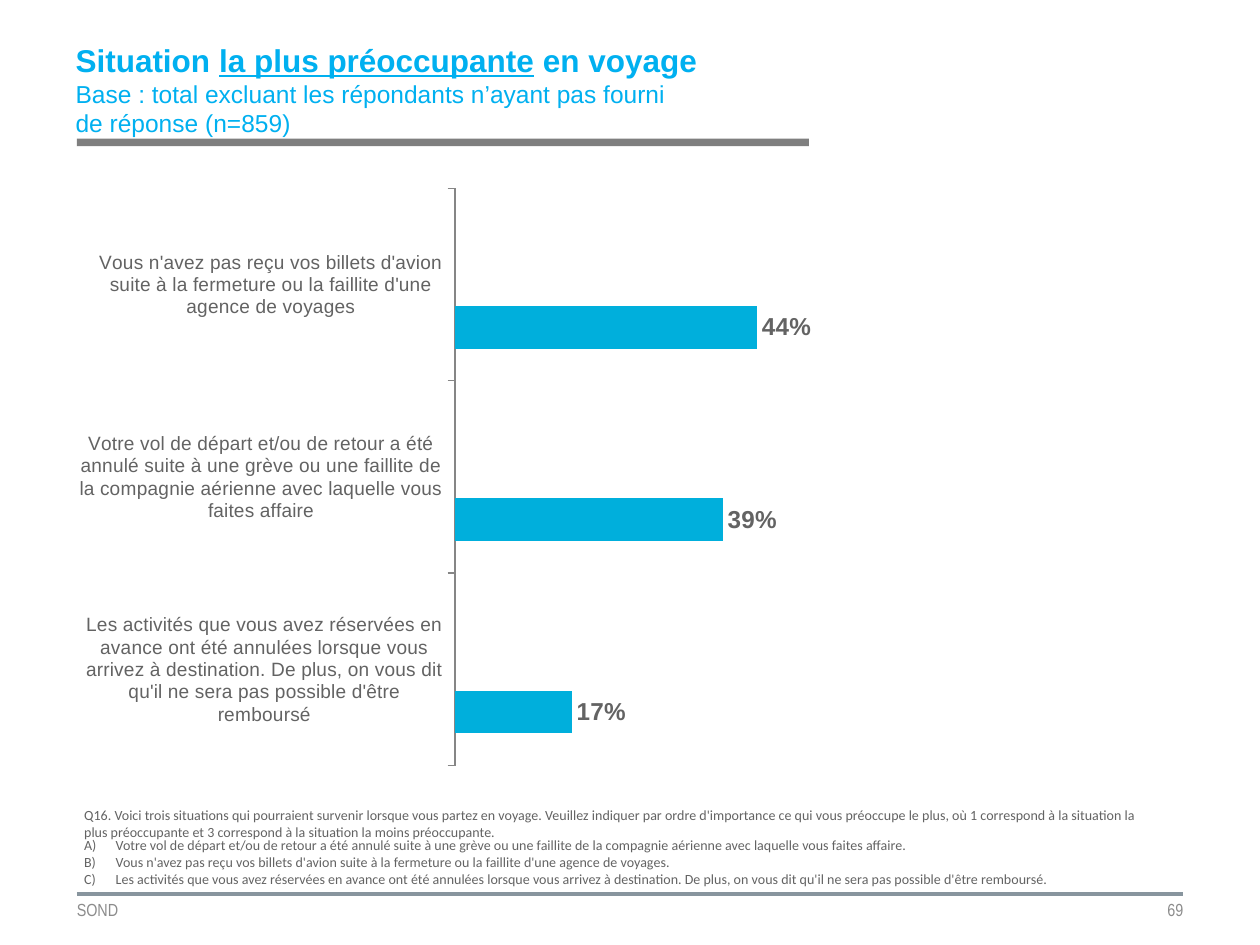
from dataclasses import dataclass

import lxml.etree
import pptx
import pptx.chart.data
import pptx.dml.color
import pptx.enum.chart
import pptx.enum.shapes
import pptx.enum.text
import pptx.oxml
import pptx.oxml.ns
import pptx.util

Pt = pptx.util.Pt
Anchor = pptx.enum.text.MSO_ANCHOR
Align = pptx.enum.text.PP_ALIGN
qn = pptx.oxml.ns.qn


def rgb(code):
    return pptx.dml.color.RGBColor.from_string(code)


@dataclass(frozen=True)
class Theme:
    title: str = "00B0F0"
    bar: str = "00AFDC"
    spare_bars: tuple = ("C0504D", "9BBB59")
    text: str = "636363"
    footer: str = "8C8C8C"
    rule: str = "88959E"
    band: str = "7F7F7F"
    axis: str = "868686"
    title_size: int = 18
    base_size: int = 14
    value_size: int = 14
    category_size: int = 11
    footer_size: int = 10
    note_size: int = 8


THEME = Theme()

TICKETS = ("Vous n'avez pas reçu vos billets d'avion suite à la fermeture "
           "ou la faillite d'une agence de voyages")
FLIGHT = ("Votre vol de départ et/ou de retour a été annulé suite à une grève ou une "
          "faillite de la compagnie aérienne avec laquelle vous faites affaire")
ACTIVITIES = ("Les activités que vous avez réservées en avance ont été annulées lorsque vous "
              "arrivez à destination. De plus, on vous dit qu'il ne sera pas possible "
              "d'être remboursé")
QUESTION = ("Q16. Voici trois situations qui pourraient survenir lorsque vous partez en voyage. "
            "Veuillez indiquer par ordre d'importance ce qui vous préoccupe le plus, où 1 "
            "correspond à la situation la plus préoccupante et 3 correspond à la situation "
            "la moins préoccupante.")


def set_font(font, name, size, color, bold=False):
    font.name = name
    font.size = Pt(size)
    font.bold = bold
    font.color.rgb = rgb(color)


def add_text(page, box, lines, anchor=Anchor.TOP, inset=None):
    """Add a wrapping text box, one paragraph per line, and return its paragraphs."""
    frame = page.shapes.add_textbox(*map(Pt, box)).text_frame
    frame.word_wrap = True
    frame.vertical_anchor = anchor
    if inset is not None:
        frame.margin_left = frame.margin_right = Pt(inset)
        frame.margin_top = frame.margin_bottom = Pt(inset)
    frame.text = "\n".join(lines)
    return frame.paragraphs


def add_heading(page, box):
    left, top, width, height = box
    paras = add_text(page, (left, top, width, 43.2), [
        "",
        "Base : total excluant les répondants n’ayant pas fourni",
        "de réponse (n=859)",
    ], Anchor.MIDDLE, 0)
    for words, underlined in (("Situation ", False), ("la plus préoccupante", True),
                              (" en voyage", False)):
        span = paras[0].add_run()
        span.text = words
        span.font.underline = underlined
    set_font(paras[0].font, "Arial", THEME.title_size, THEME.title, True)
    for para in paras[1:]:
        set_font(para.font, "Arial", THEME.base_size, THEME.title)

    # Grey band under the heading
    band = page.shapes.add_shape(pptx.enum.shapes.MSO_SHAPE.RECTANGLE, Pt(left + 0.7),
                                 Pt(top + height - 4.3), Pt(width - 0.7), Pt(4.3))
    band.shadow.inherit = False
    band.fill.solid()
    band.fill.fore_color.rgb = rgb(THEME.band)
    band.line.fill.background()


def set_plot_layout(chart, x, y, w, h):
    plot_area = chart.element.find(".//" + qn("c:plotArea"))
    for old in plot_area.findall(qn("c:layout")):
        plot_area.remove(old)
    layout = lxml.etree.Element(qn("c:layout"))
    manual = lxml.etree.SubElement(layout, qn("c:manualLayout"))
    for tag, value in (("layoutTarget", "inner"), ("xMode", "edge"), ("yMode", "edge"),
                       ("x", x), ("y", y), ("w", w), ("h", h)):
        lxml.etree.SubElement(manual, qn("c:" + tag)).set("val", str(value))
    plot_area.insert(0, layout)


def add_bar_chart(page, box):
    data = pptx.chart.data.CategoryChartData(number_format="0%")
    data.categories = [ACTIVITIES, FLIGHT, TICKETS]
    data.add_series("Series 1", (0.17, 0.39, 0.44))
    for name in ("Series 2", "Series 3"):
        data.add_series(name, (None, None, None))
    chart = page.shapes.add_chart(pptx.enum.chart.XL_CHART_TYPE.BAR_CLUSTERED,
                                  *map(Pt, box), data).chart
    chart.has_legend = False
    chart.has_title = False
    set_font(chart.font, "Arial", THEME.category_size, THEME.text)
    set_plot_layout(chart, 0.341, 0.066, 0.32, 0.904)

    # Bars
    plot = chart.plots[0]
    plot.gap_width = 150
    plot.overlap = 0
    plot.vary_by_categories = False
    for series, color in zip(plot.series, (THEME.bar, *THEME.spare_bars)):
        series.format.fill.solid()
        series.format.fill.fore_color.rgb = rgb(color)
        labels = series.data_labels
        labels.show_value = True
        labels.number_format = "0%"
        labels.number_format_is_linked = False
        labels.position = pptx.enum.chart.XL_LABEL_POSITION.OUTSIDE_END
        set_font(labels.font, "Arial", THEME.value_size, THEME.text, True)

    # Axes
    values = chart.value_axis
    values.minimum_scale, values.maximum_scale = 0, 0.5
    values.has_major_gridlines = False
    values.visible = False
    categories = chart.category_axis
    categories.major_tick_mark = pptx.enum.chart.XL_TICK_MARK.OUTSIDE
    categories.format.line.color.rgb = rgb(THEME.axis)
    categories.format.line.width = Pt(0.75)
    set_font(categories.tick_labels.font, "Arial", THEME.category_size, THEME.text)


def add_notes(page, box):
    left, top, width, height = box
    question = add_text(page, (left, top, width, 26.6), [QUESTION])
    choices = add_text(page, (left, top + 17.3, width, height - 17.3),
                       [choice + "." for choice in (FLIGHT, TICKETS, ACTIVITIES)])
    for para in (*question, *choices):
        set_font(para.font, "Calibri", THEME.note_size, THEME.text)

    # Lettered list: A), B), C)
    for para in choices:
        props = para._p.get_or_add_pPr()
        props.set("marL", str(Pt(18)))
        props.set("indent", str(-Pt(18)))
        number = pptx.oxml.parse_xml(
            f'<a:buAutoNum {pptx.oxml.ns.nsdecls("a")} type="alphaUcParenR"/>')
        props.insert_element_before(number, "a:tabLst", "a:defRPr", "a:extLst")


def add_footer(page, box):
    left, top, width, height = box
    # Two overlapping rules make one thicker line
    for y in (top, top + 0.7):
        rule = page.shapes.add_connector(pptx.enum.shapes.MSO_CONNECTOR.STRAIGHT,
                                         Pt(left), Pt(y), Pt(left + width), Pt(y))
        rule.line.color.rgb = rgb(THEME.rule)
        rule.line.width = Pt(1.5)
        lxml.etree.SubElement(rule._element.spPr, qn("a:effectLst"))

    half = width / 2
    for x, words, align in ((left, "SOND", Align.LEFT), (left + half, "69", Align.RIGHT)):
        para = add_text(page, (x, top, half, height), [words], Anchor.MIDDLE, 0)[0]
        para.alignment = align
        set_font(para.font, "Arial Narrow", THEME.footer_size, THEME.footer)


def main():
    deck = pptx.Presentation()
    deck.slide_width, deck.slide_height = Pt(720), Pt(540)
    page = deck.slides.add_slide(deck.slide_layouts[6])
    add_footer(page, (43.9, 510.5, 632.2, 18.7))
    add_heading(page, (43.2, 29.5, 419, 54))
    add_notes(page, (41, 457.2, 627.1, 72.7))
    add_bar_chart(page, (45.4, 83.5, 618.5, 365))
    deck.save("out.pptx")


if __name__ == "__main__":
    main()
